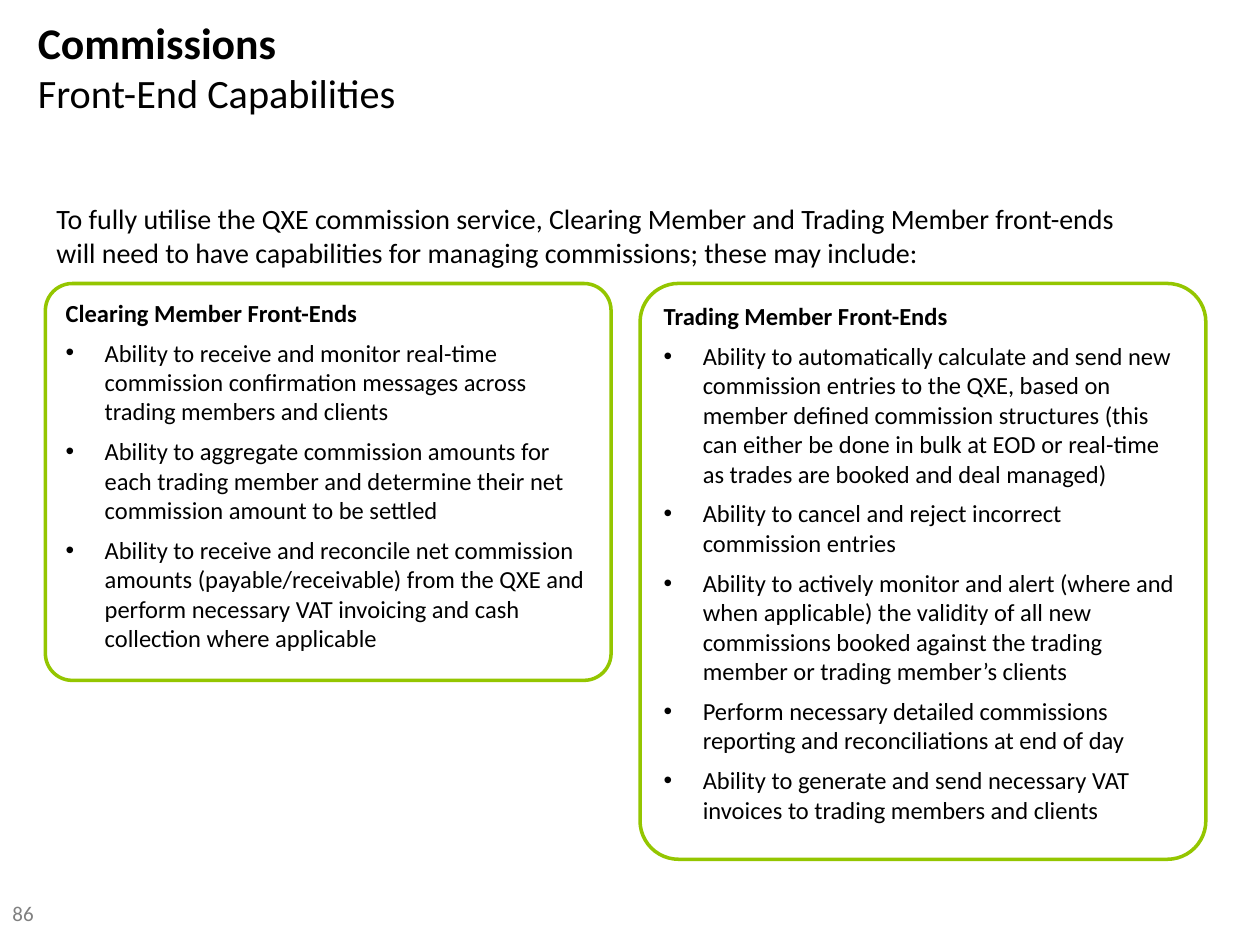
from dataclasses import dataclass

from lxml.etree import SubElement
from pptx import Presentation
from pptx.dml.color import RGBColor
from pptx.enum.shapes import MSO_SHAPE as Shape
from pptx.enum.text import MSO_ANCHOR as Anchor, MSO_AUTO_SIZE as AutoSize, PP_ALIGN as Align
from pptx.oxml.ns import qn
from pptx.util import Inches, Pt


@dataclass(frozen=True)
class Theme:
    font: str = "Calibri"
    text: str = "000000"
    muted: str = "808080"
    panel_fill: str = "FFFFFF"
    panel_line: str = "94C600"
    title_size: int = 25
    subtitle_size: int = 23
    intro_size: int = 16
    panel_size: int = 14
    number_size: int = 12


@dataclass(frozen=True)
class Panel:
    left: float
    height: float
    heading: str
    bullets: tuple[str, ...]


THEME = Theme()
PANEL_TOP, PANEL_WIDTH = 2.25, 4.49
BULLET_INDENT = Inches(0.31)

PANELS = (
    Panel(0.36, 3.15, "Clearing Member Front-Ends", (
        "Ability to receive and monitor real-time commission confirmation messages "
        "across trading members and clients",
        "Ability to aggregate commission amounts for each trading member and determine "
        "their net commission amount to be settled",
        "Ability to receive and reconcile net commission amounts (payable/receivable) "
        "from the QXE and perform necessary VAT invoicing and cash collection where applicable",
    )),
    Panel(5.08, 4.57, "Trading Member Front-Ends", (
        "Ability to automatically calculate and send new commission entries to the QXE, "
        "based on member defined commission structures (this can either be done in bulk "
        "at EOD or real-time as trades are booked and deal managed)",
        "Ability to cancel and reject incorrect commission entries",
        "Ability to actively monitor and alert (where and when applicable) the validity of "
        "all new commissions booked against the trading member or trading member’s clients",
        "Perform necessary detailed commissions reporting and reconciliations at end of day",
        "Ability to generate and send necessary VAT invoices to trading members and clients",
    )),
)


def add_text(paragraph, text: str, *, size: int, bold: bool = False,
             color: str = THEME.text) -> None:
    paragraph.alignment = Align.LEFT
    run = paragraph.add_run()
    run.text = text
    run.font.name = THEME.font
    run.font.size = Pt(size)
    run.font.bold = bold
    run.font.color.rgb = RGBColor.from_string(color)


def add_bullet(paragraph) -> None:
    properties = paragraph._p.get_or_add_pPr()
    properties.set("marL", str(BULLET_INDENT))
    properties.set("indent", str(-BULLET_INDENT))
    SubElement(properties, qn("a:buFont")).set("typeface", "Arial")
    SubElement(properties, qn("a:buChar")).set("char", "•")


def add_label(slide, left: float, top: float, width: float, height: float,
              text: str, **text_format) -> None:
    box = slide.shapes.add_textbox(Inches(left), Inches(top), Inches(width), Inches(height))
    box.text_frame.word_wrap = True
    add_text(box.text_frame.paragraphs[0], text, **text_format)


def set_title(slide, title: str, subtitle: str) -> None:
    shape = slide.shapes.title
    shape.left, shape.top = Inches(0.2), Inches(0.05)
    shape.width, shape.height = Inches(8.19), Inches(0.95)
    frame = shape.text_frame
    frame.auto_size = AutoSize.NONE
    frame.vertical_anchor = Anchor.MIDDLE
    paragraph = frame.paragraphs[0]
    add_text(paragraph, title, size=THEME.title_size, bold=True)
    paragraph.add_line_break()
    add_text(paragraph, subtitle, size=THEME.subtitle_size)


def add_panel(slide, panel: Panel) -> None:
    shape = slide.shapes.add_shape(
        Shape.ROUNDED_RECTANGLE, Inches(panel.left), Inches(PANEL_TOP),
        Inches(PANEL_WIDTH), Inches(panel.height))
    shape.adjustments[0] = 0.068
    shape.shadow.inherit = False
    shape.fill.solid()
    shape.fill.fore_color.rgb = RGBColor.from_string(THEME.panel_fill)
    shape.line.color.rgb = RGBColor.from_string(THEME.panel_line)
    shape.line.width = Pt(2)

    frame = shape.text_frame
    frame.word_wrap = True
    frame.vertical_anchor = Anchor.TOP
    add_text(frame.paragraphs[0], panel.heading, size=THEME.panel_size, bold=True)
    for bullet in panel.bullets:
        paragraph = frame.add_paragraph()
        add_bullet(paragraph)
        paragraph.space_before = Pt(6)
        add_text(paragraph, bullet, size=THEME.panel_size)


def main() -> None:
    presentation = Presentation()
    presentation.slide_width, presentation.slide_height = Inches(10), Inches(7.5)
    slide = presentation.slides.add_slide(presentation.slide_layouts[5])

    # Title and page number
    set_title(slide, "Commissions", "Front-End Capabilities")
    add_label(slide, 0, 7.1, 0.59, 0.4, "86", size=THEME.number_size, color=THEME.muted)

    # Introduction
    add_label(slide, 0.35, 1.55, 8.9, 0.65,
              "To fully utilise the QXE commission service, Clearing Member and Trading Member "
              "front-ends will need to have capabilities for managing commissions; "
              "these may include:", size=THEME.intro_size)

    # Capability panels
    for panel in PANELS:
        add_panel(slide, panel)

    presentation.save("out.pptx")


if __name__ == "__main__":
    main()
